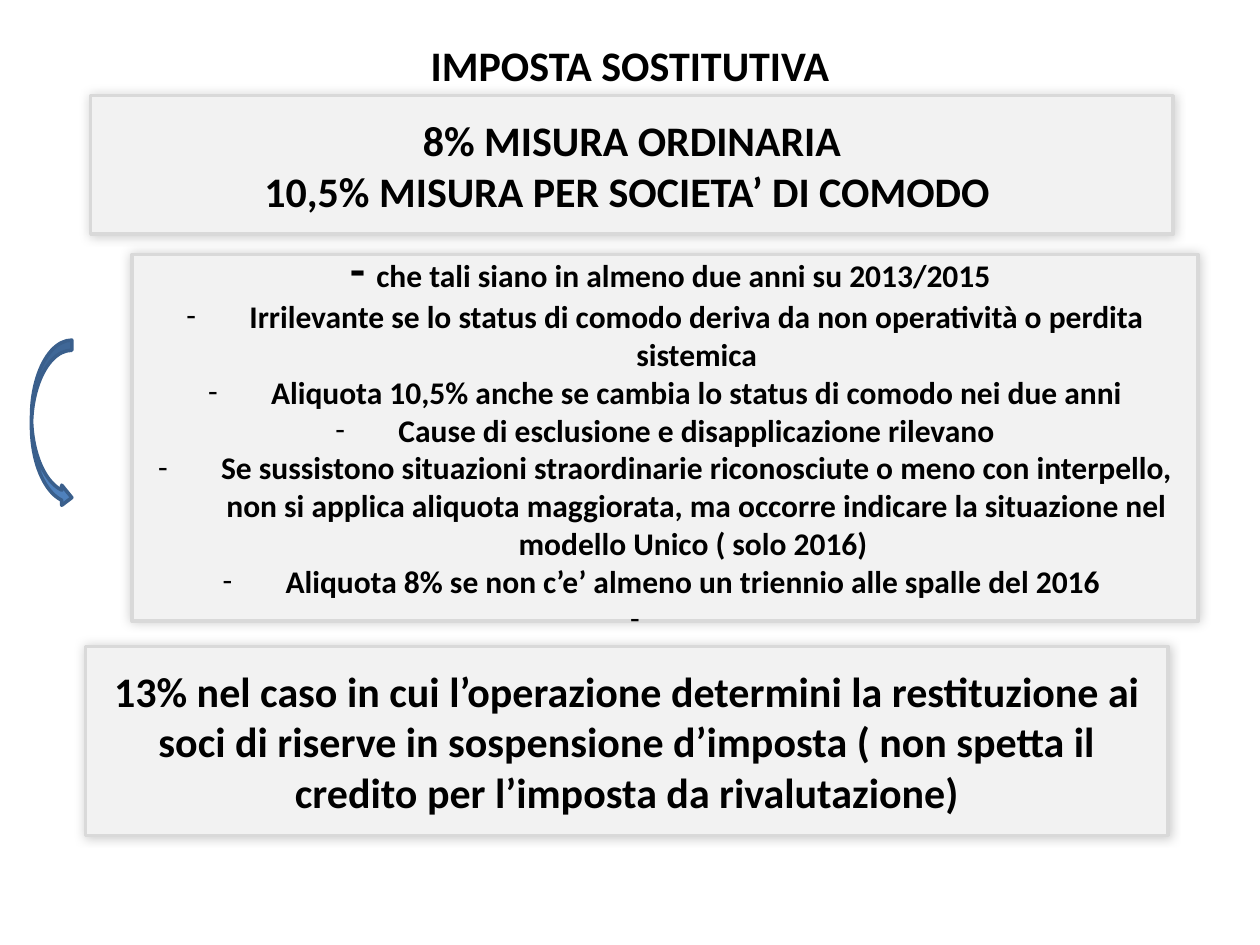
from lxml.etree import SubElement
from pptx import Presentation
from pptx.dml.color import RGBColor
from pptx.enum.shapes import MSO_SHAPE
from pptx.enum.text import MSO_ANCHOR, PP_ALIGN
from pptx.oxml.ns import qn
from pptx.util import Inches, Pt

COLORS = {
    "text": "000000",
    "panel": "F2F2F2",
    "border": "D9D9D9",
    "shadow": "000000",
    "arrow": "4F81BD",
    "arrow_border": "3A5F8C",
}
FONT = "Calibri"

RATES = ["8% MISURA ORDINARIA", "10,5% MISURA PER SOCIETA’ DI COMODO "]
CONDITIONS = [
    "Irrilevante se lo status di comodo deriva da non operatività o perdita sistemica",
    "Aliquota 10,5% anche se cambia lo status di comodo nei due anni",
    "Cause di esclusione e disapplicazione rilevano",
    "Se sussistono situazioni straordinarie riconosciute o meno con interpello, "
    "non si applica aliquota maggiorata, ma occorre indicare la situazione nel "
    "modello Unico ( solo 2016) ",
    "Aliquota 8% se non c’e’ almeno un triennio alle spalle del 2016 ",
    " ",  # the list closes with a bare dash
]
RESERVES = [
    "13% nel caso in cui l’operazione determini la restituzione ai soci di "
    "riserve in sospensione d’imposta ( non spetta il credito per l’imposta "
    "da rivalutazione)"
]


def color(name):
    return RGBColor.from_string(COLORS[name])


def place(shape, box):
    shape.left, shape.top, shape.width, shape.height = map(Inches, box)


def add_span(para, text, size):
    para.alignment = PP_ALIGN.CENTER
    span = para.add_run()
    span.text = text
    span.font.name = FONT
    span.font.size = Pt(size)
    span.font.bold = True
    span.font.color.rgb = color("text")


def add_dash(para, indent=0.5):
    properties = para._p.get_or_add_pPr()
    properties.set("marL", str(Inches(indent)))
    properties.set("indent", str(-Inches(indent)))
    SubElement(properties, qn("a:buFont"), typeface=FONT)
    SubElement(properties, qn("a:buChar"), char="-")


def add_glow_shadow(shape):
    shape.shadow.inherit = False
    effects = shape._element.spPr.find(qn("a:effectLst"))
    shadow = SubElement(effects, qn("a:outerShdw"), blurRad=str(Pt(6)),
                        dist="0", dir=str(225 * 60000), rotWithShape="0")
    tint = SubElement(shadow, qn("a:srgbClr"), val=COLORS["shadow"])
    SubElement(tint, qn("a:alpha"), val="20000")


def add_filled_shape(page, kind, box, fill, border):
    shape = page.shapes.add_shape(kind, *map(Inches, box))
    shape.fill.solid()
    shape.fill.fore_color.rgb = color(fill)
    shape.line.color.rgb = color(border)
    shape.line.width = Pt(2)
    shape.shadow.inherit = False
    return shape


def add_panel(page, box):
    panel = add_filled_shape(page, MSO_SHAPE.RECTANGLE, box, "panel", "border")
    add_glow_shadow(panel)
    frame = panel.text_frame
    frame.word_wrap = True
    frame.vertical_anchor = MSO_ANCHOR.MIDDLE
    return frame


def add_title(page, box):
    title = page.shapes.title
    place(title, box)
    title.text_frame.vertical_anchor = MSO_ANCHOR.MIDDLE
    add_span(title.text_frame.paragraphs[0], "IMPOSTA SOSTITUTIVA", 24)


def add_statement(page, box, lines):
    frame = add_panel(page, box)
    for index, line in enumerate(lines):
        para = frame.add_paragraph() if index else frame.paragraphs[0]
        add_span(para, line, 24)


def add_conditions(page, box):
    frame = add_panel(page, box)
    lead = frame.paragraphs[0]
    add_span(lead, " - ", 28)
    add_span(lead, "che tali siano in almeno due anni su 2013/2015", 18)
    for condition in CONDITIONS:
        para = frame.add_paragraph()
        add_span(para, condition, 18)
        add_dash(para)


def main():
    deck = Presentation()
    deck.slide_width, deck.slide_height = Inches(10), Inches(7.5)
    page = deck.slides.add_slide(deck.slide_layouts[5])

    # Heading and rates
    add_title(page, (0, 0.21, 10, 0.6))
    add_statement(page, (0.72, 0.76, 8.59, 1.1), RATES)

    # Conditions, with the arrow leading down to the reserves
    add_conditions(page, (1.05, 2.02, 8.46, 2.91))
    add_filled_shape(page, MSO_SHAPE.CURVED_RIGHT_ARROW,
                     (0.25, 2.7, 0.32, 1.33), "arrow", "arrow_border")
    add_statement(page, (0.68, 5.13, 8.59, 1.5), RESERVES)

    deck.save("out.pptx")


if __name__ == "__main__":
    main()
